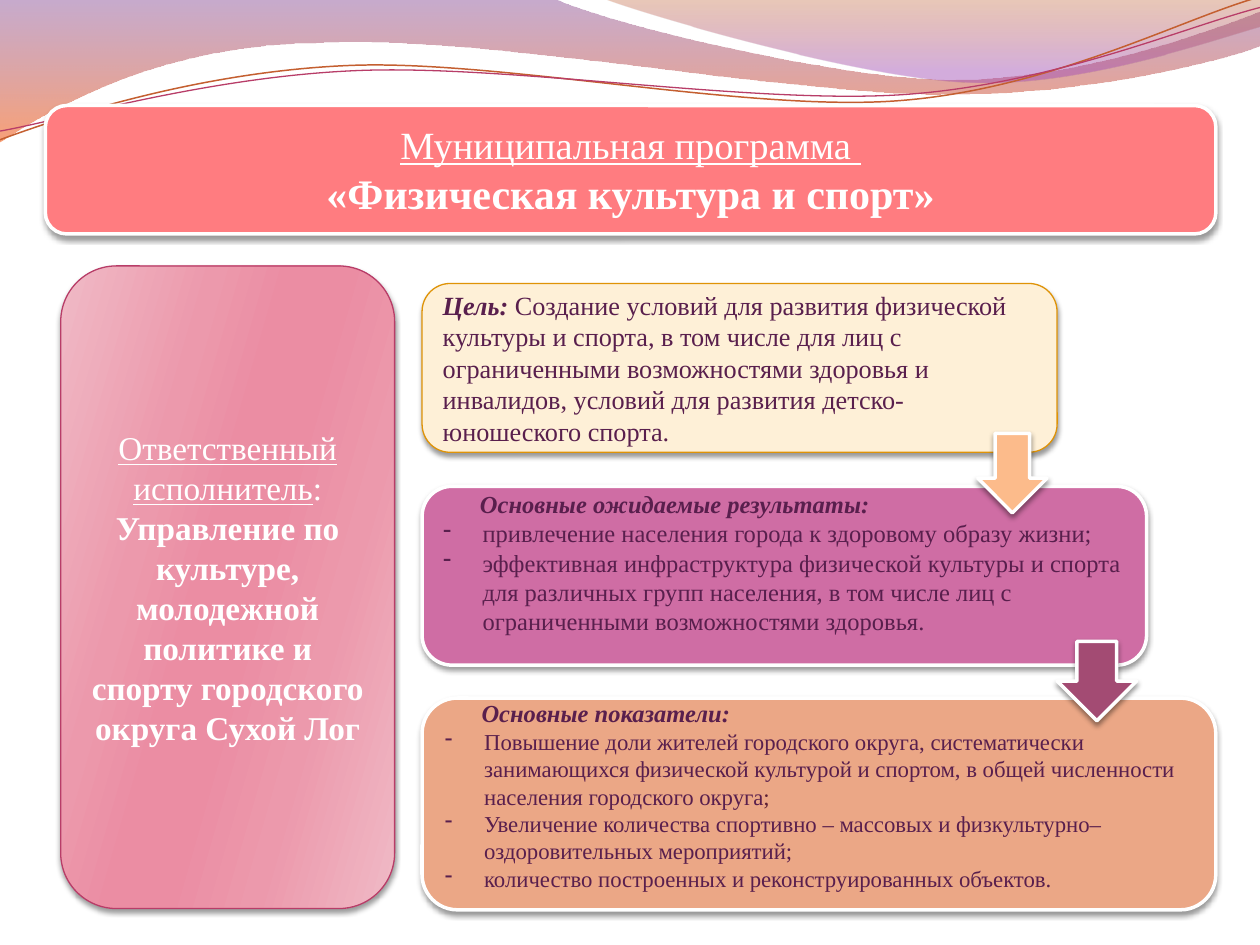
from pptx import Presentation
from pptx.dml.color import RGBColor
from pptx.enum.shapes import MSO_SHAPE
from pptx.enum.text import MSO_ANCHOR, PP_ALIGN
from pptx.oxml import parse_xml
from pptx.oxml.ns import nsdecls, qn
from pptx.util import Pt


def rgb(h):
    return RGBColor.from_string(h)


def paint(sp, fill, line, width, angle=90):
    sp.shadow.inherit = False
    if isinstance(fill, str):
        sp.fill.solid()
        sp.fill.fore_color.rgb = rgb(fill)
    else:
        sp.fill.background()
    if fill and not isinstance(fill, str):
        stops = "".join(
            f'<a:gs pos="{pos * 1000}"><a:srgbClr val="{c}"><a:alpha val="{alpha * 1000}"/></a:srgbClr></a:gs>'
            for pos, c, alpha in fill)
        grad = parse_xml(f'<a:gradFill {nsdecls("a")} rotWithShape="1"><a:gsLst>{stops}</a:gsLst>'
                         f'<a:lin ang="{angle * 60000}" scaled="0"/></a:gradFill>')
        spPr = sp.element.spPr
        spPr.replace(spPr.find(qn("a:noFill")), grad)
    if line:
        sp.line.color.rgb = rgb(line)
        sp.line.width = Pt(width)
    else:
        sp.line.fill.background()


prs = Presentation()
prs.slide_width, prs.slide_height = Pt(720), Pt(540)
s = prs.slides.add_slide(prs.slide_layouts[6])

waves = [
    ([(0, -0.7), (316.8, -0.7),
      (342.7, 12.2, 478.1, 45.4, 545.8, 45.4), (614.2, 45.4, 689.8, 18.7, 720, 6.5),
      (720.7, 25.9), (707.8, 31.7, 626.4, 54.7, 537.1, 54),
      (447.8, 54, 275, 20.2, 185, 24.5), (92.9, 25.2, 33.1, 59.8, -0.7, 81.4)],
     [(0, "834591", 45), (100, "F35307", 55)], None, 0, 0),
    ([(344.9, -0.7), (366.5, 7.9, 491, 44.6, 553.7, 46.8),
      (616.3, 49.7, 691.9, 23, 720, 15.1), (720, 0)],
     [(0, "B74915", 30), (80, "A14BB4", 45)], None, 0, 0),
    ([(-1.4, 62.9), (33.8, 51.7, 114.1, 29.4, 199.8, 29.9),
      (284.8, 30.3, 425.9, 67.3, 512.5, 64.8), (599.1, 62.4, 676.5, 25.7, 720.2, 15.6)],
     None, "C45F30", 0.85, 357.3),
    ([(-1.1, 57.9), (32.9, 53.7, 118.3, 32.5, 204.1, 33),
      (290.6, 33.4, 428.9, 63.1, 515.5, 61.4), (601.4, 59.6, 678.4, 30.1, 721.4, 21.3)],
     None, "B83D68", 0.75, 357.3),
]
for segments, fill, line, width, turn in waves:
    pts = [(Pt(x), Pt(y)) for seg in segments for x, y in zip(seg[::2], seg[1::2])]
    fb = s.shapes.build_freeform(*pts[0])
    fb.add_line_segments(pts[1:], close=fill is not None)
    sp = fb.convert_to_shape()
    nodes = iter(list(sp.element.iter(qn("a:lnTo"))))
    for seg in segments[1:]:
        node = next(nodes)
        if len(seg) == 6:
            curve = parse_xml(f'<a:cubicBezTo {nsdecls("a")}/>')
            node.addprevious(curve)
            for n in (node, next(nodes), next(nodes)):
                curve.append(n[0])
                n.getparent().remove(n)
    sp.rotation = turn
    paint(sp, fill, line, width)

WHITE, PLUM = "FFFFFF", "591F4D"
CENTER, LEFT = PP_ALIGN.CENTER, PP_ALIGN.LEFT
plain = {}
bold = {"bold": True}
under = {"underline": True}
lead = {"bold": True, "italic": True}
pink = [(0, "F0BAC6", 100), (30, "EC99AC", 100), (45, "EB8DA3", 100),
        (55, "EB8DA3", 100), (73, "EC99AC", 100), (100, "F0BAC6", 100)]
BOX, ARROW = MSO_SHAPE.ROUNDED_RECTANGLE, MSO_SHAPE.DOWN_ARROW

shapes = [
    (BOX, (25.9, 60.3, 668.9, 73.4), "FF7C80", WHITE, 2, 3.6, WHITE, CENTER, [
        ("", [("Муниципальная программа ", 22, under)]),
        ("", [("«Физическая культура и спорт»", 24, bold)])]),
    (BOX, (34.7, 152, 190.8, 367.2), pink, "B83D68", 0.75, 3.6, WHITE, CENTER, [
        ("", [("Ответственный исполнитель", 19, under), (": ", 19, plain),
              ("Управление по культуре, молодежной политике и спорту городского округа Сухой Лог", 19, bold)])]),
    (BOX, (241.2, 277.9, 414, 102.2), "CF6DA4", WHITE, 2, 19, PLUM, LEFT, [
        ("head", [("Основные ожидаемые результаты:", 14, lead)]),
        ("item", [("привлечение населения города к здоровому образу жизни;", 14, plain)]),
        ("item", [("эффективная инфраструктура физической культуры и спорта для различных групп населения, "
                   "в том числе лиц с ограниченными возможностями здоровья.", 14, plain)])]),
    (BOX, (241.2, 398.9, 453.6, 121), "EBA786", WHITE, 2, 13.8, PLUM, LEFT, [
        ("head", [("Основные показатели:", 14, lead)]),
        ("item", [("Повышение доли жителей городского округа, систематически занимающихся физической "
                   "культурой и спортом, в общей численности населения городского округа", 13, plain),
                  (";", 13, plain)]),
        ("item", [("Увеличение количества спортивно – массовых и физкультурно–оздоровительных мероприятий;",
                   13, plain)]),
        ("item", [("количество построенных и реконструированных объектов.", 13, plain)])]),
    (BOX, (241.2, 162, 362.9, 96.5), "FEF0D7", "DF9307", 0.75, 3.6, PLUM, LEFT, [
        ("", [("Цель:", 15, lead),
              (" Создание условий для развития физической культуры и спорта, в том числе для лиц с "
               "ограниченными возможностями здоровья и инвалидов, условий для развития "
               "детско-юношеского спорта.", 15, plain)])]),
    (ARROW, (558.7, 247.7, 39.6, 45.4), "FCBB8B", WHITE, 2, 3.6, WHITE, CENTER, []),
    (ARROW, (604.1, 366.5, 45.4, 45.4), "A34B73", WHITE, 2, 3.6, WHITE, CENTER, []),
]
indents = {"head": (21, 0), "item": (22.5, -22.5)}

for kind, box, fill, line, width, bottom, color, align, paras in shapes:
    sp = s.shapes.add_shape(kind, *map(Pt, box))
    paint(sp, fill, line, width, 16)
    sp.element.spPr.find(qn("a:effectLst")).append(parse_xml(
        f'<a:outerShdw {nsdecls("a")} blurRad="{Pt(3)}" dist="{Pt(2)}" dir="5400000" rotWithShape="0">'
        '<a:srgbClr val="000000"><a:alpha val="40000"/></a:srgbClr></a:outerShdw>'))
    tf = sp.text_frame
    fmt = {"word_wrap": True, "vertical_anchor": MSO_ANCHOR.MIDDLE, "margin_left": Pt(7.2),
           "margin_right": Pt(7.2), "margin_top": Pt(3.6), "margin_bottom": Pt(bottom)}
    for k, v in fmt.items():
        setattr(tf, k, v)
    for i, (role, runs) in enumerate(paras):
        p = tf.add_paragraph() if i else tf.paragraphs[0]
        p.alignment = align
        if role:
            pPr = p._p.get_or_add_pPr()
            for k, v in zip(("marL", "indent"), indents[role]):
                pPr.set(k, str(Pt(v)))
            if role == "item":
                pPr.append(parse_xml(f'<a:buFontTx {nsdecls("a")}/>'))
                pPr.append(parse_xml(f'<a:buChar {nsdecls("a")} char="-"/>'))
        for text, size, style in runs:
            r = p.add_run()
            r.text = text
            for k, v in {"name": "Times New Roman", "size": Pt(size), **style}.items():
                setattr(r.font, k, v)
            r.font.color.rgb = rgb("5C1F34" if text == ";" else color)

prs.save("out.pptx")
